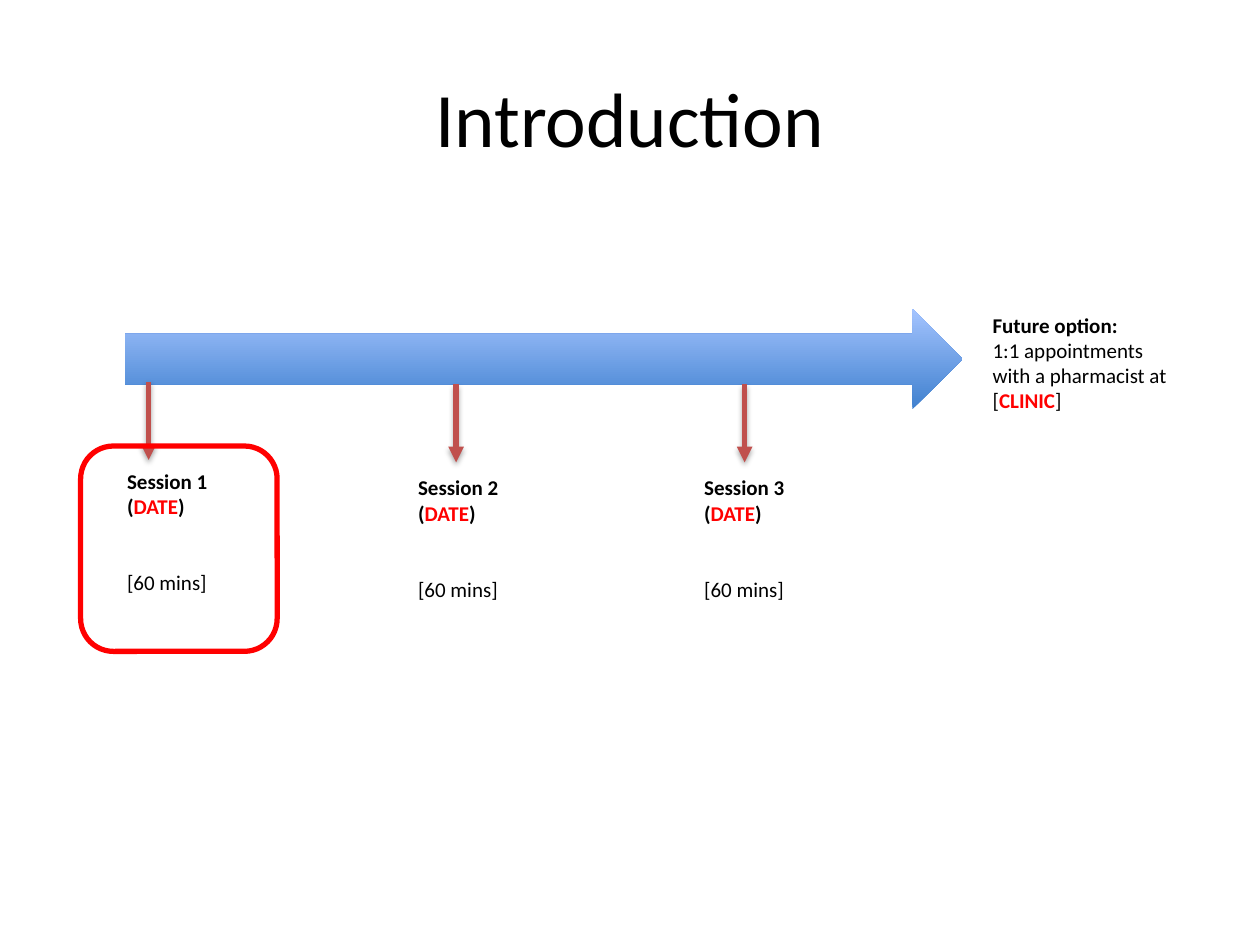
from lxml.etree import SubElement
from pptx import Presentation
from pptx.dml.color import RGBColor
from pptx.enum.shapes import MSO_CONNECTOR, MSO_SHAPE
from pptx.enum.text import MSO_ANCHOR, PP_ALIGN
from pptx.oxml.ns import qn
from pptx.util import Inches, Pt

BLACK, RED, BRICK = "000000", "FF0000", "C0504D"


def color(code):
    return RGBColor.from_string(code)


def add_text(slide, box, lines, size=12, align=PP_ALIGN.LEFT,
             anchor=MSO_ANCHOR.TOP, gaps=()):
    """Each line is a list of (words, colour, bold); gaps maps line to points before."""
    frame = slide.shapes.add_textbox(*map(Inches, box)).text_frame
    frame.word_wrap = True
    frame.vertical_anchor = anchor
    gaps = dict(gaps)
    for i, line in enumerate(lines):
        para = frame.paragraphs[0] if i == 0 else frame.add_paragraph()
        para.alignment = align
        if i in gaps:
            para.space_before = Pt(gaps[i])
        for words, code, bold in line:
            run = para.add_run()
            run.text = words
            font = run.font
            font.name, font.size, font.bold = "Calibri", Pt(size), bold
            font.color.rgb = color(code)


def add_shape(slide, kind, box):
    shape = slide.shapes.add_shape(kind, *map(Inches, box))
    shape.shadow.inherit = False
    return shape


def add_band(slide, box):
    """Timeline arrow, dark at its foot and light at its top."""
    band = add_shape(slide, MSO_SHAPE.RIGHT_ARROW, box)
    band.line.fill.background()
    band.fill.gradient()
    band.fill.gradient_angle = 90
    for stop, code in zip(band.fill.gradient_stops, ("3F80CE", "A4C4FF")):
        stop.color.rgb = color(code)


def add_frame(slide, box):
    frame = add_shape(slide, MSO_SHAPE.ROUNDED_RECTANGLE, box)
    frame.fill.background()
    frame.line.color.rgb = color(RED)
    frame.line.width = Pt(3)


def add_drop(slide, x, y, height=0.62):
    """Downward arrow with a soft shadow."""
    drop = slide.shapes.add_connector(
        MSO_CONNECTOR.STRAIGHT, *map(Inches, (x, y, x, y + height)))
    drop.line.color.rgb = color(BRICK)
    drop.line.width = Pt(3)
    props = drop.line._get_or_add_ln()
    SubElement(props, qn("a:tailEnd"), type="triangle")
    effects = SubElement(props.getparent(), qn("a:effectLst"))
    shade = SubElement(effects, qn("a:outerShdw"), blurRad=str(Pt(3.1)),
                       dist=str(Pt(1.8)), dir="5400000", rotWithShape="0")
    tint = SubElement(shade, qn("a:srgbClr"), val=BLACK)
    SubElement(tint, qn("a:alpha"), val="35000")


def add_session(slide, name, drop, box):
    add_drop(slide, *drop)
    add_text(slide, box, [
        [(name, BLACK, True)],
        [("(", BLACK, True), ("DATE", RED, True), (")", BLACK, True)],
        [("[60 mins]", BLACK, False)],
    ], gaps={2: 29})


def main():
    deck = Presentation()
    deck.slide_width, deck.slide_height = Inches(10), Inches(7.5)
    slide = deck.slides.add_slide(deck.slide_layouts[6])

    add_text(slide, (0.5, 0.3, 9, 1.25), [[("Introduction", BLACK, False)]],
             size=44, align=PP_ALIGN.CENTER, anchor=MSO_ANCHOR.MIDDLE)
    add_band(slide, (0.99, 2.45, 6.65, 0.8))

    sessions = [
        ((1.18, 3.03), (0.91, 3.67, 1.32, 1.11)),
        ((3.62, 3.05), (3.22, 3.72, 1.53, 1.11)),
        ((5.91, 3.05), (5.49, 3.72, 1.34, 1.11)),
    ]
    for number, (drop, box) in enumerate(sessions, 1):
        add_session(slide, f"Session {number}", drop, box)

    add_text(slide, (7.78, 2.43, 1.73, 0.91), [
        [("Future option:", BLACK, True)],
        [("1:1 appointments with a pharmacist at [", BLACK, False),
         ("CLINIC", RED, True), ("]", BLACK, False)],
    ])
    add_frame(slide, (0.64, 3.54, 1.56, 1.63))
    deck.save("out.pptx")


if __name__ == "__main__":
    main()
